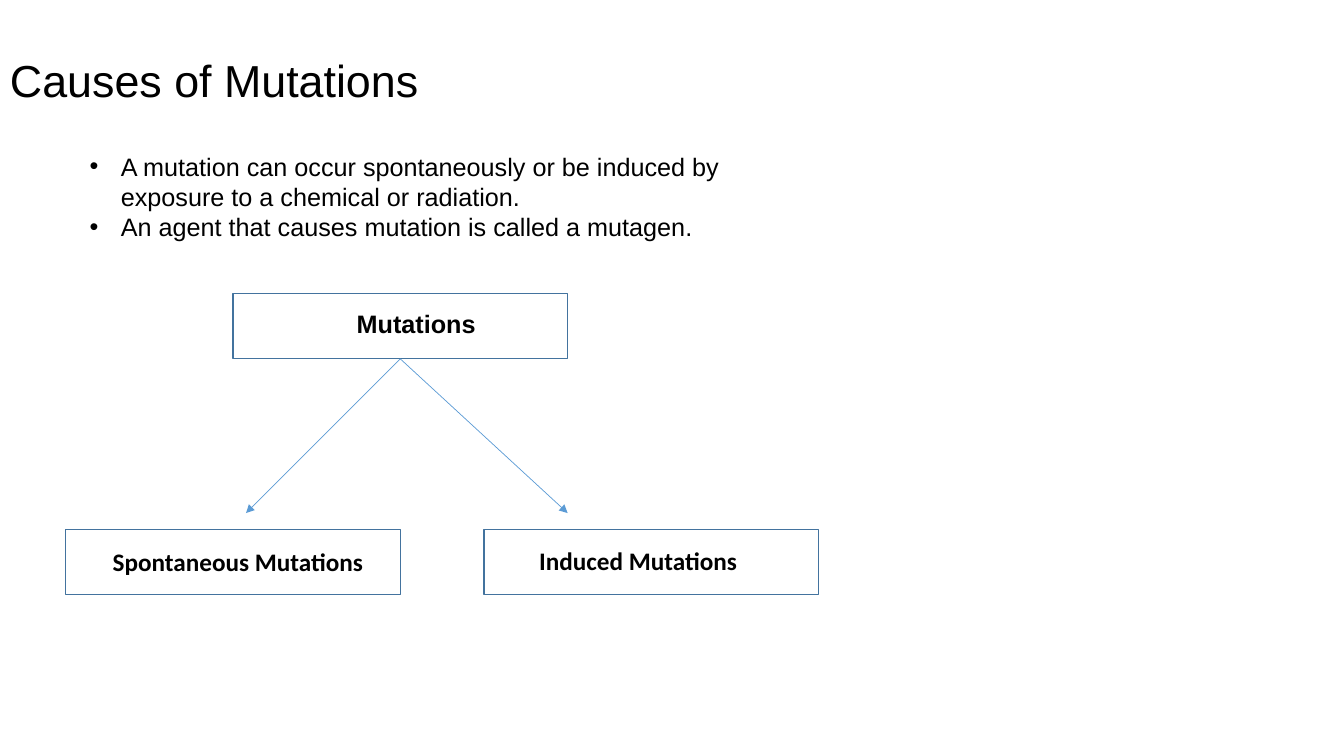
from lxml.etree import SubElement
from pptx import Presentation
from pptx.dml.color import RGBColor
from pptx.enum.shapes import MSO_CONNECTOR, MSO_SHAPE
from pptx.enum.text import MSO_ANCHOR, MSO_AUTO_SIZE
from pptx.oxml.ns import qn
from pptx.util import Inches, Pt

COLORS = {"text": "000000", "border": "43739E", "arrow": "5B9BD5"}
WIDTH, HEIGHT = 13.33, 7.5
BOX_W, BOX_H = 3.32, 0.65
BULLETS = [
    "A mutation can occur spontaneously or be induced by exposure to a chemical or radiation.",
    "An agent that causes mutation is called a mutagen.",
]


def color(name):
    return RGBColor.from_string(COLORS[name])


def add_text(s, box, lines, size=18, font="Arial", bold=False, wrap=True):
    tf = s.shapes.add_textbox(*map(Inches, box)).text_frame
    tf.word_wrap = wrap
    for i, line in enumerate(lines):
        p = tf.paragraphs[0] if i == 0 else tf.add_paragraph()
        r = p.add_run()
        r.text = line
        for key, value in {"size": Pt(size), "name": font, "bold": bold}.items():
            setattr(r.font, key, value)
        r.font.color.rgb = color("text")
    return tf


def add_title(s, box):
    tf = add_text(s, box, ["Causes of Mutations"], size=32)
    tf.vertical_anchor = MSO_ANCHOR.BOTTOM
    tf.margin_bottom = Inches(0.39)
    tf.paragraphs[0].line_spacing = 0.9


def add_bullets(s, box):
    tf = add_text(s, box, BULLETS)
    tf.auto_size = MSO_AUTO_SIZE.SHAPE_TO_FIT_TEXT
    for p in tf.paragraphs:
        pPr = p._p.get_or_add_pPr()
        for key, value in {"marL": Inches(0.31), "indent": -Inches(0.31)}.items():
            pPr.set(key, str(value))
        SubElement(pPr, qn("a:buFont"), typeface="Arial")
        SubElement(pPr, qn("a:buChar"), char="•")


def add_node(s, left, top, text, dx, dy, width, font):
    sp = s.shapes.add_shape(MSO_SHAPE.RECTANGLE, *map(Inches, (left, top, BOX_W, BOX_H)))
    sp.shadow.inherit = False
    sp.fill.background()
    sp.line.color.rgb = color("border")
    sp.line.width = Pt(1)
    tf = add_text(s, (left + dx, top + dy, width, 0.4), [text], font=font, bold=True, wrap=False)
    tf.auto_size = MSO_AUTO_SIZE.SHAPE_TO_FIT_TEXT


def add_arrow(s, start, end):
    c = s.shapes.add_connector(MSO_CONNECTOR.STRAIGHT, *map(Inches, start + end))
    c.line.color.rgb = color("arrow")
    c.line.width = Pt(0.5)
    SubElement(c.line._get_or_add_ln(), qn("a:tailEnd"), type="triangle")
    SubElement(c._element.spPr, qn("a:effectLst"))


def add_tree(s, left, top, drop):
    root = left + BOX_W / 2
    right = left + BOX_W * 1.25
    below = top + drop
    add_node(s, root, top, "Mutations", 1.13, 0.1, 1.46, "Arial")
    for x in (root + 0.13, root + BOX_W):
        add_arrow(s, (root + BOX_W / 2, top + BOX_H), (x, below - 0.16))
    add_node(s, left, below, "Spontaneous Mutations", 0.37, 0.12, 2.76, "Calibri")
    add_node(s, right, below, "Induced Mutations", 0.45, 0.11, 2.24, "Calibri")


def main():
    prs = Presentation()
    prs.slide_width, prs.slide_height = Inches(WIDTH), Inches(HEIGHT)
    s = prs.slides.add_slide(prs.slide_layouts[6])
    add_title(s, (0, 0, 8.62, 1.45))
    add_bullets(s, (0.79, 1.45, WIDTH / 2, 1.01))
    add_tree(s, 0.65, 2.91, 2.34)
    prs.save("out.pptx")


if __name__ == "__main__":
    main()
